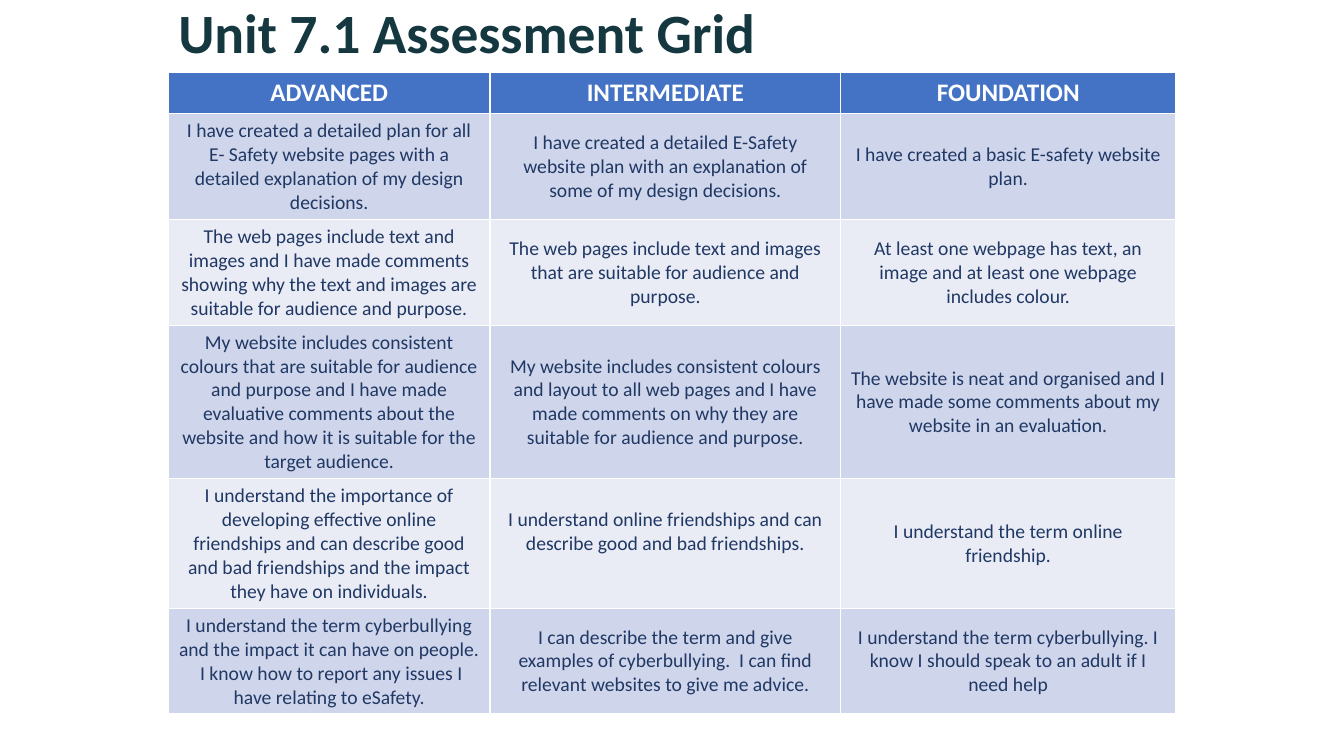
"""Build the Unit 7.1 assessment grid slide."""
import pptx
import pptx.dml.color
import pptx.enum.text
import pptx.util

Inches = pptx.util.Inches
Pt = pptx.util.Pt
RGBColor = pptx.dml.color.RGBColor
MIDDLE = pptx.enum.text.MSO_ANCHOR.MIDDLE
TOP = pptx.enum.text.MSO_ANCHOR.TOP

TITLE_COLOR = RGBColor(0x14, 0x37, 0x40)
HEADER_FILL = RGBColor(0x44, 0x72, 0xC4)
BODY_COLOR = RGBColor(0x20, 0x38, 0x64)
WHITE = RGBColor(0xFF, 0xFF, 0xFF)
BAND_FILLS = [RGBColor(0xE9, 0xEB, 0xF5), RGBColor(0xCF, 0xD5, 0xEA)]

GRID = [
    ["ADVANCED", "INTERMEDIATE", "FOUNDATION"],
    ["I have created a detailed plan for all E- Safety website pages with a detailed explanation of my design decisions.",
     "I have created a detailed E-Safety website plan with an explanation of some of my design decisions.",
     "I have created a basic E-safety website plan."],
    ["The web pages include text and images and I have made comments showing why the text and images are suitable for audience and purpose.",
     "The web pages include text and images that are suitable for audience and purpose.",
     "At least one webpage has text, an image and at least one webpage includes colour."],
    ["My website includes consistent colours that are suitable for audience and purpose and I have made evaluative comments about the website and how it is suitable for the target audience.",
     "My website includes consistent colours and layout to all web pages and I have made comments on why they are suitable for audience and purpose.",
     "The website is neat and organised and I have made some comments about my website in an evaluation."],
    ["I understand the importance of developing effective online friendships and can describe good and bad friendships and the impact they have on individuals.",
     "I understand online friendships and can describe good and bad friendships.",
     "I understand the term online friendship."],
    ["I understand the term cyberbullying and the impact it can have on people.  I know how to report any issues I have relating to eSafety.",
     "I can describe the term and give examples of cyberbullying.  I can find relevant websites to give me advice.",
     "I understand the term cyberbullying. I know I should speak to an adult if I need help"],
]
COLUMN_WIDTHS = [3.19, 3.48, 3.32]
ROW_HEIGHTS = [0.41, 1.05, 1.05, 1.52, 1.29, 1.04]


def format_run(paragraph, size, color, bold):
    font = paragraph.runs[0].font
    font.name = "Calibri"
    font.size = Pt(size)
    font.bold = bold
    font.color.rgb = color


presentation = pptx.Presentation()
presentation.slide_width = Inches(13.33)
presentation.slide_height = Inches(7.5)
slide = presentation.slides.add_slide(presentation.slide_layouts[6])

title = slide.shapes.add_textbox(Inches(1.67), Inches(0), Inches(9.61), Inches(0.71))
title.text_frame.word_wrap = True
title.text_frame.vertical_anchor = MIDDLE
title.text_frame.text = "Unit 7.1 Assessment Grid"
title.text_frame.paragraphs[0].line_spacing = 0.9
format_run(title.text_frame.paragraphs[0], 39.6, TITLE_COLOR, True)

table = slide.shapes.add_table(
    len(GRID), len(COLUMN_WIDTHS), Inches(1.67), Inches(0.72),
    Inches(sum(COLUMN_WIDTHS)), Inches(sum(ROW_HEIGHTS))).table
for column, width in zip(table.columns, COLUMN_WIDTHS):
    column.width = Inches(width)
for row, height in zip(table.rows, ROW_HEIGHTS):
    row.height = Inches(height)

for row_index, texts in enumerate(GRID):
    is_header = row_index == 0
    for column_index, text in enumerate(texts):
        cell = table.cell(row_index, column_index)
        cell.text_frame.text = text
        paragraph = cell.text_frame.paragraphs[0]
        paragraph.alignment = pptx.enum.text.PP_ALIGN.CENTER
        format_run(paragraph, 18 if is_header else 14,
                   WHITE if is_header else BODY_COLOR, is_header)
        cell.vertical_anchor = TOP if is_header else MIDDLE
        cell.fill.solid()
        cell.fill.fore_color.rgb = HEADER_FILL if is_header else BAND_FILLS[row_index % 2]

table.cell(4, 1).margin_bottom = Inches(0.29)

presentation.save("out.pptx")
